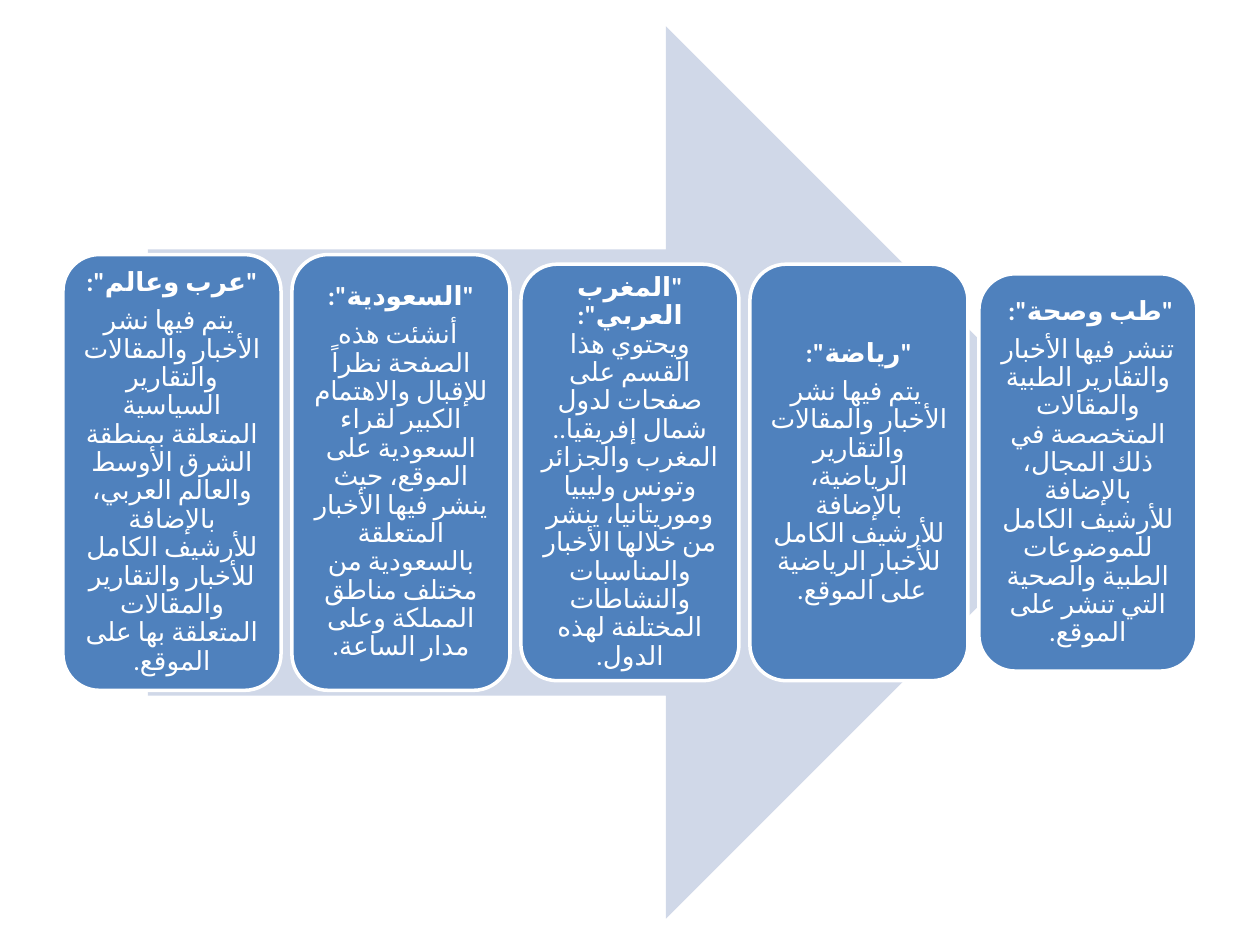
import lxml.etree
import pptx
import pptx.dml.color
import pptx.enum.shapes
import pptx.enum.text
import pptx.oxml.ns
import pptx.util

Pt = pptx.util.Pt
SHAPES = pptx.enum.shapes.MSO_SHAPE

SLIDE_WIDTH, SLIDE_HEIGHT = 720, 540
MARGIN, CARD_GAP = 36, 6.25

# Each section: card height, then paragraphs made of (text, bold) runs.
SECTIONS = [
    (249, [[('"عرب وعالم":', True)],
           [(" ", True),
            ("يتم فيها نشر الأخبار والمقالات والتقارير السياسية المتعلقة بمنطقة "
             "الشرق الأوسط والعالم العربي، بالإضافة للأرشيف الكامل للأخبار "
             "والتقارير والمقالات المتعلقة بها على الموقع.", False)]]),
    (249, [[('"السعودية":', True)],
           [(" ", True),
            ("أنشئت هذه الصفحة نظراً للإقبال والاهتمام الكبير لقراء السعودية على "
             "الموقع، حيث ينشر فيها الأخبار المتعلقة بالسعودية من مختلف مناطق "
             "المملكة وعلى مدار الساعة.", False)]]),
    (238, [[('"المغرب العربي": ', True),
            ("ويحتوي هذا القسم على صفحات لدول شمال إفريقيا.. المغرب والجزائر "
             "وتونس وليبيا وموريتانيا، ينشر من خلالها الأخبار والمناسبات "
             "والنشاطات المختلفة لهذه الدول.", False)]]),
    (238, [[('"رياضة":', True)],
           [(" ", True),
            ("يتم فيها نشر الأخبار والمقالات والتقارير الرياضية، بالإضافة "
             "للأرشيف الكامل للأخبار الرياضية على الموقع. ", False)]]),
    (227, [[('"طب وصحة": ', True)],
           [("تنشر فيها الأخبار والتقارير الطبية والمقالات المتخصصة في ذلك "
             "المجال، بالإضافة للأرشيف الكامل للموضوعات الطبية والصحية التي "
             "تنشر على الموقع.", False)]]),
]


def color(hex_value):
    return pptx.dml.color.RGBColor.from_string(hex_value)


def apply(target, values):
    for name, value in values.items():
        setattr(target, name, value)


def set_arabic(run, typeface):
    """Mark the run as Arabic and give its complex script a typeface."""
    properties = run._r.get_or_add_rPr()
    properties.set("lang", "ar-SA")
    lxml.etree.SubElement(properties, pptx.oxml.ns.qn("a:cs"),
                          typeface=typeface)


class SectionSlide:
    """Holds the style and the slide being drawn."""

    arrow_fill, card_fill, light = "D0D8E8", "4F81BD", "FFFFFF"
    frame_format = {
        "word_wrap": True,
        "vertical_anchor": pptx.enum.text.MSO_ANCHOR.MIDDLE,
        "margin_left": Pt(4.5), "margin_right": Pt(4.5),
        "margin_top": Pt(4.5), "margin_bottom": Pt(4.5),
    }
    paragraph_format = {
        "alignment": pptx.enum.text.PP_ALIGN.CENTER,
        "line_spacing": 0.9, "space_before": Pt(0), "space_after": Pt(5.5),
    }
    font_format = {"name": "Calibri", "size": Pt(15)}

    def __init__(self, slide):
        self.slide = slide

    def shape(self, kind, left, top, width, height, fill):
        shape = self.slide.shapes.add_shape(
            kind, Pt(left), Pt(top), Pt(width), Pt(height))
        shape.shadow.inherit = False
        shape.fill.solid()
        shape.fill.fore_color.rgb = color(fill)
        return shape

    def arrow(self, left, top, width, height):
        arrow = self.shape(SHAPES.RIGHT_ARROW, left, top, width, height,
                           self.arrow_fill)
        arrow.line.fill.background()

    def card(self, left, top, width, height, paragraphs):
        card = self.shape(SHAPES.ROUNDED_RECTANGLE, left, top, width, height,
                          self.card_fill)
        card.line.color.rgb = color(self.light)
        card.line.width = Pt(2)
        apply(card.text_frame, self.frame_format)
        for index, runs in enumerate(paragraphs):
            paragraph = (card.text_frame.add_paragraph() if index
                         else card.text_frame.paragraphs[0])
            apply(paragraph, self.paragraph_format)
            paragraph._p.get_or_add_pPr().set("rtl", "1")
            for text, bold in runs:
                run = paragraph.add_run()
                run.text = text
                apply(run.font, {**self.font_format, "bold": bold})
                run.font.color.rgb = color(self.light)
                set_arabic(run, self.font_format["name"])


def main():
    deck = pptx.Presentation()
    deck.slide_width, deck.slide_height = Pt(SLIDE_WIDTH), Pt(SLIDE_HEIGHT)
    page = SectionSlide(deck.slides.add_slide(deck.slide_layouts[6]))

    page.arrow(84.5, 15, 551, 510)

    count = len(SECTIONS)
    card_width = (SLIDE_WIDTH - 2 * MARGIN - (count - 1) * CARD_GAP) / count
    for index, (height, paragraphs) in enumerate(SECTIONS):
        left = MARGIN + index * (card_width + CARD_GAP)
        page.card(left, (SLIDE_HEIGHT - height) / 2, card_width, height,
                  paragraphs)

    deck.save("out.pptx")


if __name__ == "__main__":
    main()
